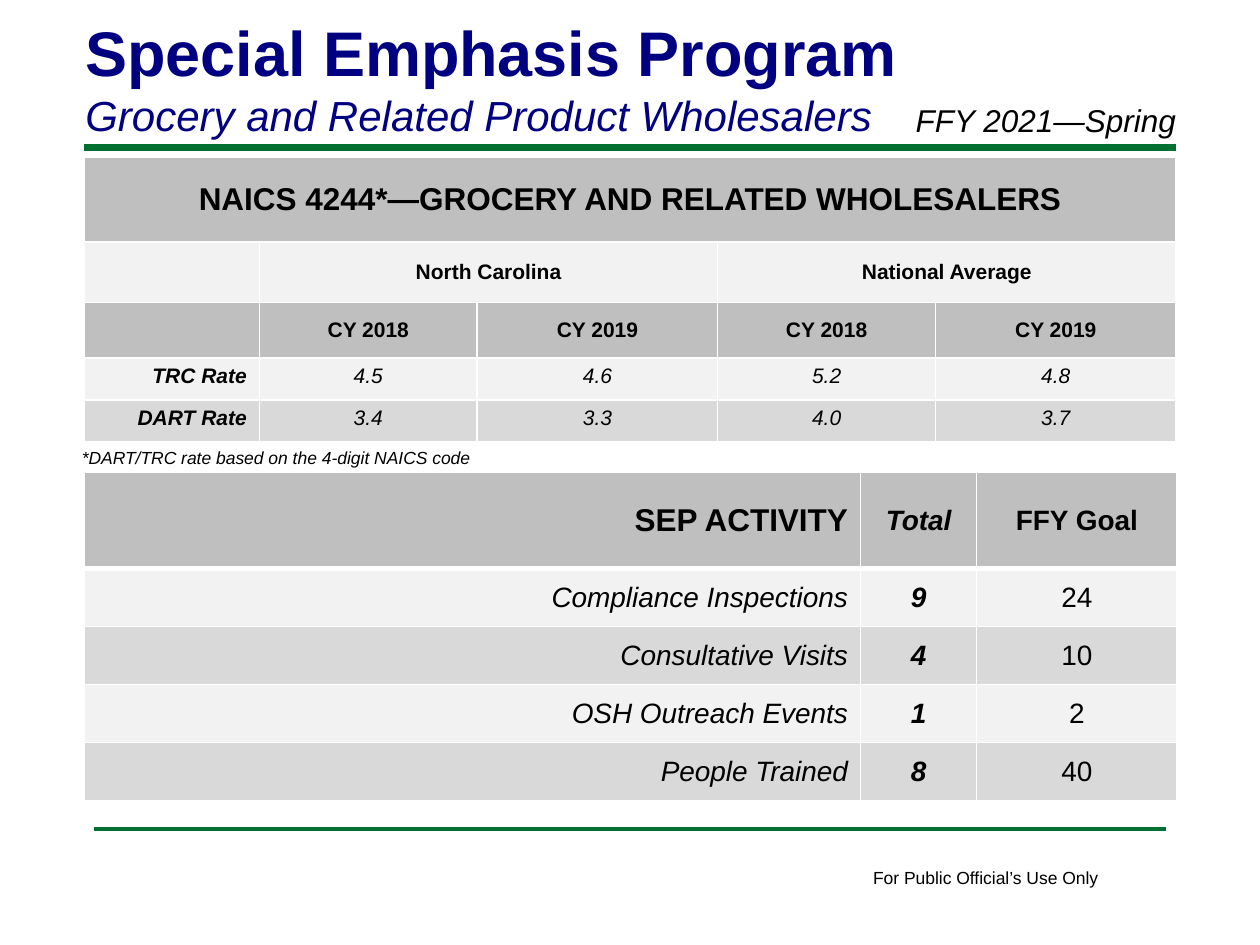
"""Builds the grocery wholesalers special emphasis program slide."""
from collections import namedtuple
from lxml import etree
from pptx import Presentation
from pptx import util as u
from pptx.dml.color import RGBColor as Rgb
from pptx.enum import shapes, text
from pptx.oxml import ns

Theme = namedtuple("Theme", "face ink navy green white head light band huge large big mid small tiny")
theme = Theme("Arial", "000000", "000080", "007030", "FFFFFF", "BFBFBF", "F2F2F2", "D9D9D9",
              36, 24, 18, 16, 12, 10)
LEFT, MID, RIGHT = text.PP_ALIGN.LEFT, text.PP_ALIGN.CENTER, text.PP_ALIGN.RIGHT


def write(par, words, size, bold=False, slant=False, color=theme.ink, align=LEFT):
    """Put styled words in a paragraph."""
    par.text = words
    par.alignment = align
    for run in par.runs:
        font = run.font
        font.name, font.size, font.bold, font.italic = theme.face, u.Pt(size), bold, slant
        font.color.rgb = Rgb.from_string(color)


def grid(top, wides, highs, fills, thick):
    """Add an empty table with filled cells and white borders."""
    table = slide.shapes.add_table(len(highs), len(wides), u.Cm(1.7), u.Cm(top),
                                   u.Cm(sum(wides)), u.Cm(sum(highs))).table
    for col, wide in zip(table.columns, wides):
        col.width = u.Cm(wide)
    for r, (row, high, fill) in enumerate(zip(table.rows, highs, fills)):
        row.height = u.Cm(high)
        for cell in row.cells:
            props = cell._tc.get_or_add_tcPr()
            for side in "LRTB":
                width = thick if r == 0 and side == "B" else 1
                line = etree.SubElement(props, ns.qn("a:ln" + side), w=str(u.Pt(width)))
                paint = etree.SubElement(line, ns.qn("a:solidFill"))
                etree.SubElement(paint, ns.qn("a:srgbClr"), val=theme.white)
            cell.fill.solid()
            cell.fill.fore_color.rgb = Rgb.from_string(fill)
            cell.vertical_anchor = text.MSO_ANCHOR.MIDDLE
    return table


deck = Presentation()
deck.slide_width, deck.slide_height = u.Cm(25.4), u.Cm(19.05)
slide = deck.slides.add_slide(deck.slide_layouts[6])

for start, end, y, width in [(1.7, 23.7, 2.97, 4), (1.9, 23.5, 16.71, 2)]:
    rule = slide.shapes.add_connector(shapes.MSO_CONNECTOR.STRAIGHT,
                                      u.Cm(start), u.Cm(y), u.Cm(end), u.Cm(y))
    rule.line.color.rgb = Rgb.from_string(theme.green)
    rule.line.width = u.Pt(width)
    etree.SubElement(rule._element.spPr, ns.qn("a:effectLst"))

goals = grid(9.53, [15.65, 2.34, 4.04], [1.93] + [1.17] * 4,
             [theme.head] + [theme.light, theme.band] * 2, 3)
tasks = [
    ("SEP ACTIVITY", "Total", "FFY Goal"),
    ("Compliance Inspections", "9", "24"),
    ("Consultative Visits", "4", "10"),
    ("OSH Outreach Events", "1", "2"),
    ("People Trained", "8", "40"),
]
for r, row in enumerate(tasks):
    for c, words in enumerate(row):
        top = r == 0
        write(goals.cell(r, c).text_frame.paragraphs[0], words,
              theme.big if top and c == 0 else theme.mid, bold=top or c == 1,
              slant=c == 1 or (c == 0 and not top), align=MID if c else RIGHT)

rates = grid(3.18, [3.53, 4.39, 4.85, 4.39, 4.85], [1.7, 1.22, 1.12, 0.84, 0.84],
             [theme.head, theme.light, theme.head, theme.light, theme.band], 1)
for r, first, last in [(0, 0, 4), (1, 1, 2), (1, 3, 4)]:
    rates.cell(r, first).merge(rates.cell(r, last))
facts = [
    ("NAICS 4244*—GROCERY AND RELATED WHOLESALERS", "", "", "", ""),
    ("", "North Carolina", "", "National Average", ""),
    ("", "CY 2018", "CY 2019", "CY 2018", "CY 2019"),
    ("TRC Rate", "4.5", "4.6", "5.2", "4.8"),
    ("DART Rate", "3.4", "3.3", "4.0", "3.7"),
]
for r, row in enumerate(facts):
    for c, words in enumerate(row):
        cell, data = rates.cell(r, c), r > 2
        if data:
            cell.vertical_anchor = text.MSO_ANCHOR.TOP
        if words:
            write(cell.text_frame.paragraphs[0], words, theme.small if r else theme.big,
                  bold=not data or c == 0, slant=data, align=RIGHT if data and c == 0 else MID)

labels = [
    (1.47, 0.15, 20.96, 2.82, True, [
        ("Special Emphasis Program", theme.huge, True, False, theme.navy),
        ("Grocery and Related Product Wholesalers", theme.large, False, True, theme.navy)]),
    (1.4, 8.89, 8.56, 0.69, True, [
        ("*DART/TRC rate based on the 4-digit NAICS code", theme.tiny, False, True)]),
    (18.21, 1.91, 6.35, 1.02, True, [("FFY 2021—Spring", theme.big, False, True)]),
    (17.35, 17.35, 5.11, 0.69, False, [("For Public Official’s Use Only", theme.tiny)]),
]
for x, y, wide, high, wrap, lines in labels:
    frame = slide.shapes.add_textbox(u.Cm(x), u.Cm(y), u.Cm(wide), u.Cm(high)).text_frame
    frame.word_wrap = wrap
    frame.auto_size = text.MSO_AUTO_SIZE.SHAPE_TO_FIT_TEXT
    for n, line in enumerate(lines):
        write(frame.add_paragraph() if n else frame.paragraphs[0], *line)

deck.save("out.pptx")
